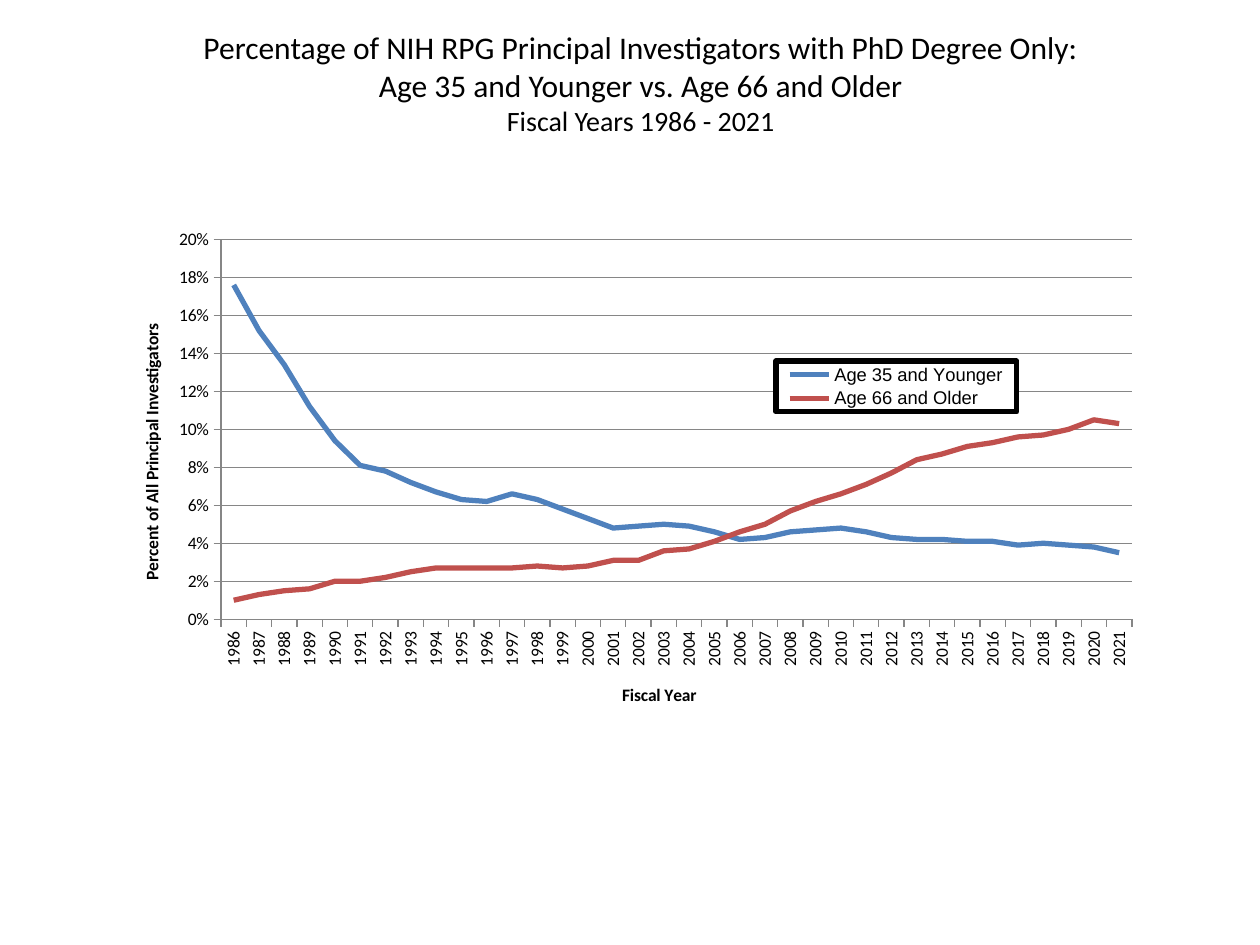
from lxml.etree import SubElement
from pptx import Presentation
from pptx.chart.data import CategoryChartData
from pptx.dml.color import RGBColor
from pptx.enum.chart import XL_CHART_TYPE, XL_LEGEND_POSITION, XL_TICK_MARK
from pptx.enum.text import MSO_ANCHOR, MSO_AUTO_SIZE, PP_ALIGN
from pptx.oxml import parse_xml
from pptx.oxml.ns import nsdecls, qn
from pptx.util import Inches, Pt

BLACK = RGBColor(0x00, 0x00, 0x00)
GRAY = RGBColor(0x86, 0x86, 0x86)
BLUE = RGBColor(0x4F, 0x81, 0xBD)
RED = RGBColor(0xC0, 0x50, 0x4D)

TITLE = [
    ("Percentage of NIH RPG Principal Investigators with PhD Degree Only:", 18),
    ("Age 35 and Younger vs. Age 66 and Older", 18),
    ("Fiscal Years 1986 - 2021", 16),
]
YEARS = [str(year) for year in range(1986, 2022)]
YOUNG = [
    0.176, 0.152, 0.134, 0.112, 0.094, 0.081, 0.078, 0.072, 0.067,
    0.063, 0.062, 0.066, 0.063, 0.058, 0.053, 0.048, 0.049, 0.05,
    0.049, 0.046, 0.042, 0.043, 0.046, 0.047, 0.048, 0.046, 0.043,
    0.042, 0.042, 0.041, 0.041, 0.039, 0.04, 0.039, 0.038, 0.035,
]
OLD = [
    0.01, 0.013, 0.015, 0.016, 0.02, 0.02, 0.022, 0.025, 0.027,
    0.027, 0.027, 0.027, 0.028, 0.027, 0.028, 0.031, 0.031, 0.036,
    0.037, 0.041, 0.046, 0.05, 0.057, 0.062, 0.066, 0.071, 0.077,
    0.084, 0.087, 0.091, 0.093, 0.096, 0.097, 0.1, 0.105, 0.103,
]
SERIES = [("Age 35 and Younger", YOUNG, BLUE), ("Age 66 and Older", OLD, RED)]


class Deck:
    """Hold the style and the current slide, and draw its elements."""

    face = "Calibri"

    def __init__(self, show):
        self.slide = show.slides.add_slide(show.slide_layouts[5])

    def style(self, font, size, face=face, bold=False):
        font.name = face
        font.size = Pt(size)
        font.bold = bold
        font.color.rgb = BLACK

    def title(self, lines, left, top, width, height):
        shape = self.slide.shapes.title
        shape.left, shape.top = Inches(left), Inches(top)
        shape.width, shape.height = Inches(width), Inches(height)
        frame = shape.text_frame
        frame.word_wrap = True
        frame.auto_size = MSO_AUTO_SIZE.NONE
        frame.vertical_anchor = MSO_ANCHOR.TOP
        frame.text = "\n".join(text for text, size in lines)
        for para, (text, size) in zip(frame.paragraphs, lines):
            para.alignment = PP_ALIGN.CENTER
            self.style(para.font, size)

    def chart(self, cats, series, left, top, width, height):
        data = CategoryChartData(number_format="0%")
        data.categories = cats
        for name, values, color in series:
            data.add_series(name, values)
        chart = self.slide.shapes.add_chart(
            XL_CHART_TYPE.LINE, Inches(left), Inches(top),
            Inches(width), Inches(height), data,
        ).chart
        chart.has_title = False
        self.style(chart.font, 10)
        chart.plots[0].vary_by_categories = False
        for line, (name, values, color) in zip(chart.plots[0].series, series):
            line.smooth = False
            line.format.line.color.rgb = color
            line.format.line.width = Pt(3)
        return chart

    def axis(self, axis, text, spin=0):
        axis.has_title = True
        frame = axis.axis_title.text_frame
        frame.text = text
        self.style(frame.paragraphs[0].font, 10, bold=True)
        self.style(axis.tick_labels.font, 10)
        axis.major_tick_mark = XL_TICK_MARK.OUTSIDE
        axis.minor_tick_mark = XL_TICK_MARK.NONE
        axis.format.line.color.rgb = GRAY
        axis.format.line.width = Pt(0.75)
        if spin:
            body = axis.tick_labels.font
            body = axis.format and axis.axis_title and body
            frame.word_wrap = True

    def legend(self, chart):
        chart.has_legend = True
        legend = chart.legend
        legend.position = XL_LEGEND_POSITION.RIGHT
        legend.include_in_layout = True
        self.style(legend.font, 10.5, "Arial")
        box = parse_xml(
            f'<c:spPr {nsdecls("c", "a")}>'
            '<a:solidFill><a:srgbClr val="FFFFFF"/></a:solidFill>'
            f'<a:ln w="{Pt(3)}"><a:solidFill><a:srgbClr val="{BLACK}"/>'
            "</a:solidFill></a:ln></c:spPr>"
        )
        chart.element.xpath(".//c:legend/c:overlay")[0].addnext(box)

    def place(self, part, left, top, width=None, height=None):
        for old in part.findall(qn("c:layout")):
            part.remove(old)
        layout = parse_xml(f'<c:layout {nsdecls("c")}/>')
        manual = SubElement(layout, qn("c:manualLayout"))
        rules = {"xMode": "edge", "yMode": "edge", "x": left, "y": top}
        if width:
            rules.update(w=width, h=height)
        if part.tag == qn("c:plotArea"):
            rules = {"layoutTarget": "inner", **rules}
            part.insert(0, layout)
        else:
            part.find(qn("c:overlay")).addprevious(layout)
        for key, value in rules.items():
            SubElement(manual, qn(f"c:{key}")).set("val", str(value))


def main():
    show = Presentation()
    show.slide_width, show.slide_height = Inches(10), Inches(7.5)
    deck = Deck(show)
    deck.title(TITLE, 1.42, 0.17, 7.33, 0.98)
    chart = deck.chart(YEARS, SERIES, 0.84, 1.74, 8.31, 4.02)
    years, share = chart.category_axis, chart.value_axis
    deck.axis(years, "Fiscal Year")
    deck.axis(share, "Percent of All Principal Investigators")
    share.minimum_scale, share.maximum_scale = 0, 0.2
    share.major_unit = 0.02
    share.tick_labels.number_format = "0%"
    share.tick_labels.number_format_is_linked = False
    share.major_gridlines.format.line.color.rgb = GRAY
    share.major_gridlines.format.line.width = Pt(0.75)
    deck.legend(chart)

    root = chart.element
    labels = root.xpath(".//c:catAx/c:txPr/a:bodyPr")[0]
    labels.set("rot", "-5400000")
    labels.set("vert", "horz")
    deck.place(root.xpath(".//c:plotArea")[0], 0.11, 0.04, 0.87, 0.75)
    deck.place(root.xpath(".//c:legend")[0], 0.64, 0.28, 0.23, 0.1)
    deck.place(root.xpath(".//c:catAx/c:title")[0], 0.49, 0.91)
    deck.place(root.xpath(".//c:valAx/c:title")[0], 0.03, 0.2)
    show.save("out.pptx")


if __name__ == "__main__":
    main()
